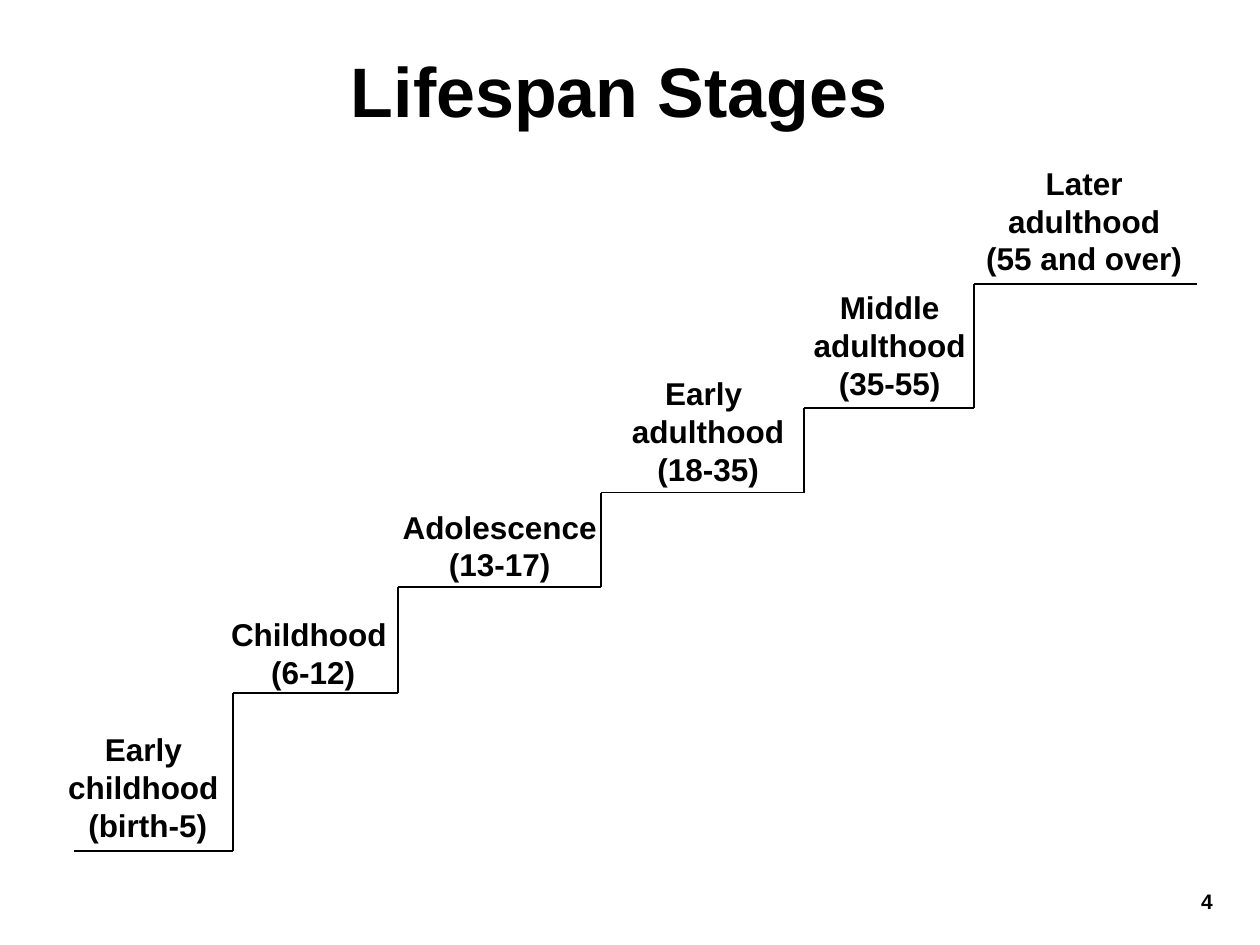
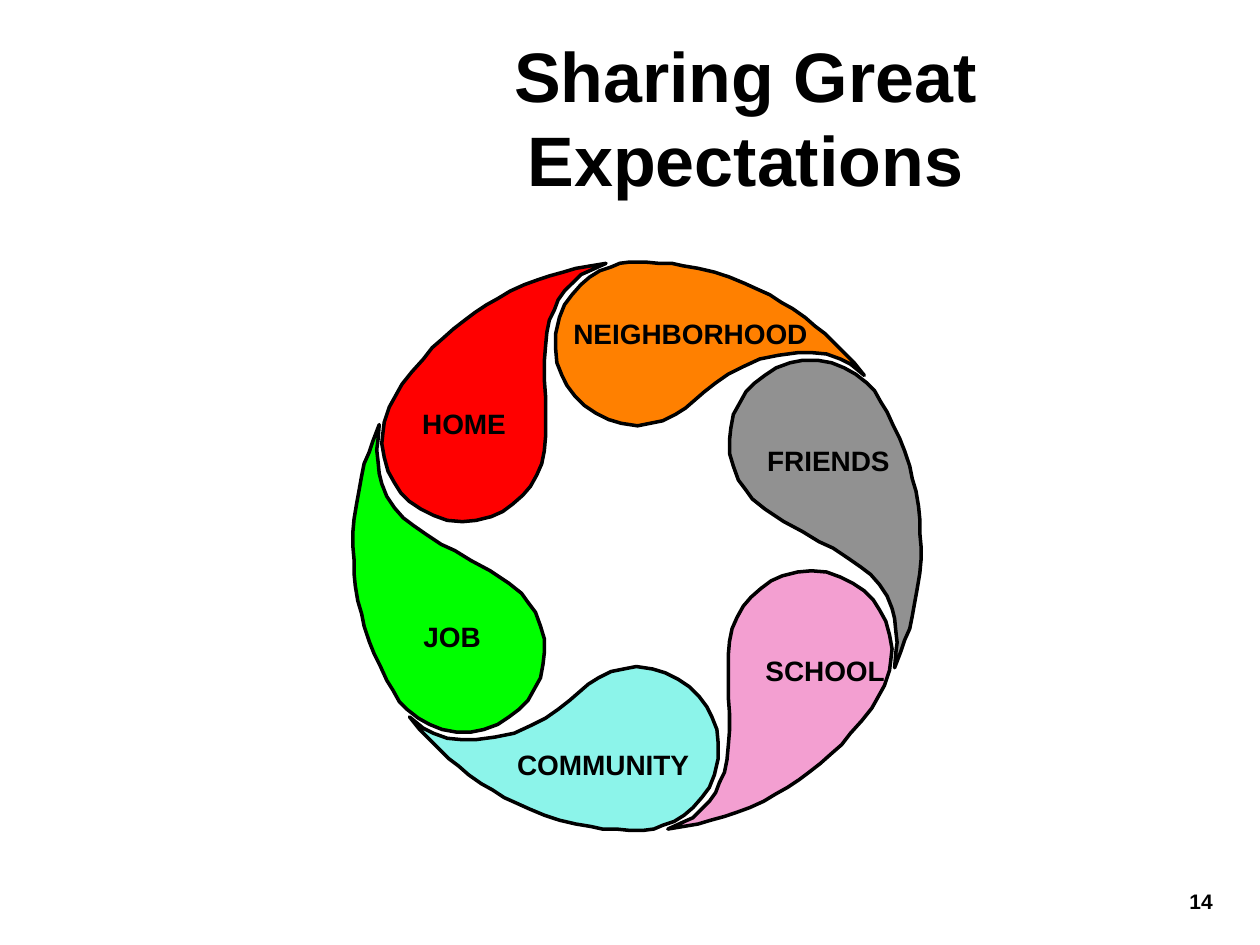
from dataclasses import dataclass

from lxml.etree import SubElement
from pptx import Presentation
from pptx.dml.color import RGBColor
from pptx.enum.text import MSO_ANCHOR, MSO_AUTO_SIZE, PP_ALIGN
from pptx.oxml.ns import qn
from pptx.presentation import Presentation as Deck
from pptx.slide import Slide
from pptx.text.text import TextFrame
from pptx.util import Cm, Pt

FONT = "Arial"
BLACK = "000000"
TITLE_SIZE, STAGE_SIZE, PETAL_SIZE, NUMBER_SIZE = 40, 18, 16, 12
TITLE_ONLY = 5

Points = list[tuple[int, int]]


@dataclass(frozen=True)
class Area:
    """A rectangle in centimetres."""
    left: float
    top: float
    width: float
    height: float

    def lengths(self) -> tuple[Cm, Cm, Cm, Cm]:
        return Cm(self.left), Cm(self.top), Cm(self.width), Cm(self.height)


@dataclass(frozen=True)
class Label:
    text: str
    left: float
    top: float
    width: float


@dataclass(frozen=True)
class Petal:
    label: Label
    fill: str
    outline: Points


# Stairs: each tread runs from one x to the next, at its own height
STEP_X = [1.5, 4.7, 8.03, 12.12, 16.21, 19.63, 24.13]
STEP_Y = [17.15, 13.97, 11.84, 9.93, 8.23, 5.72]
STAGES = [
    Label("Early \vchildhood \v(birth-5)", 0.86, 14.6, 4.24),
    Label("Childhood \v(6-12)", 4.09, 12.27, 4.45),
    Label("Adolescence\v(13-17)", 7.85, 10.11, 4.45),
    Label("Early \vadulthood\v(18-35)", 12.27, 7.42, 4.01),
    Label("Middle\vadulthood\v(35-55)", 15.93, 5.69, 4.01),
    Label("Later\vadulthood\v(55 and over)", 19.58, 3.18, 4.55),
]

# Petal outlines, in grid units
GRID_UNIT = Cm(0.0254)
RING_SPAN = (1011, 867)  # twice the centre of the ring
UPPER_LEFT: Points = [
    (433, 347), (433, 329), (433, 314), (432, 301), (432, 287), (433, 275), (434, 264),
    (436, 254), (440, 246), (443, 238), (448, 231), (454, 225), (461, 218), (470, 214),
    (481, 209), (469, 211), (457, 213), (447, 216), (436, 219), (427, 222), (416, 226),
    (405, 231), (395, 237), (386, 242), (377, 248), (369, 254), (360, 261), (351, 269),
    (343, 276), (336, 285), (327, 295), (319, 305), (314, 314), (309, 323), (305, 335),
    (304, 343), (303, 352), (305, 363), (308, 374), (313, 383), (318, 391), (325, 398),
    (334, 404), (344, 409), (355, 413), (367, 414), (378, 413), (390, 410), (399, 406),
    (407, 400), (415, 393), (421, 386), (426, 377), (430, 368), (432, 358),
]
TOP: Points = [
    (473, 328), (464, 322), (456, 314), (450, 306), (446, 298), (442, 288), (441, 277),
    (441, 265), (444, 252), (448, 242), (454, 234), (461, 226), (468, 220), (476, 215),
    (485, 212), (492, 209), (500, 208), (505, 208), (512, 208), (522, 209), (533, 209),
    (542, 211), (554, 213), (567, 216), (579, 220), (591, 225), (602, 230), (611, 234),
    (620, 240), (629, 245), (639, 252), (647, 259), (655, 265), (663, 273), (671, 281),
    (678, 288), (686, 298), (675, 289), (667, 285), (656, 281), (645, 280), (633, 280),
    (618, 282), (603, 285), (590, 291), (578, 297), (568, 304), (559, 311), (544, 324),
    (536, 329), (526, 334), (516, 336), (506, 338), (493, 336), (483, 333),
]
UPPER_RIGHT: Points = [
    (586, 381), (582, 370), (579, 360), (579, 349), (580, 340), (582, 329), (587, 320),
    (592, 311), (599, 304), (607, 298), (616, 292), (627, 288), (637, 286), (649, 286),
    (660, 288), (670, 292), (679, 297), (688, 304), (694, 310), (699, 319), (704, 327),
    (709, 338), (714, 348), (718, 358), (722, 370), (724, 380), (727, 390), (729, 402),
    (730, 412), (730, 423), (731, 434), (731, 444), (730, 455), (728, 467), (726, 478),
    (724, 489), (722, 499), (718, 508), (715, 517), (710, 530), (711, 518), (712, 510),
    (711, 501), (710, 491), (708, 483), (704, 473), (698, 464), (691, 456), (683, 450),
    (673, 443), (661, 435), (650, 430), (637, 422), (622, 414), (607, 404), (597, 396),
    (592, 389),
]


def half_turn(outline: Points) -> Points:
    """Turn an outline by 180 degrees about the centre of the ring."""
    return [(RING_SPAN[0] - x, RING_SPAN[1] - y) for x, y in outline]


PETALS = [
    Petal(Label("HOME", 8.1, 8.08, 2.51), "FF0000", UPPER_LEFT),
    Petal(Label("NEIGHBORHOOD", 11.05, 6.25, 5.74), "FF8000", TOP),
    Petal(Label("FRIENDS", 15.01, 8.81, 3.38), "919191", UPPER_RIGHT),
    Petal(Label("SCHOOL", 14.83, 13.06, 3.61), "F39FD1", half_turn(UPPER_LEFT)),
    Petal(Label("COMMUNITY", 9.91, 14.94, 4.5), "8CF4EA", half_turn(TOP)),
    Petal(Label("JOB", 8.2, 12.37, 1.83), "00FF00", half_turn(UPPER_RIGHT)),
]


def color(value: str) -> RGBColor:
    return RGBColor.from_string(value)


def write(frame: TextFrame, text: str, size: float,
          align: PP_ALIGN = PP_ALIGN.CENTER) -> None:
    frame.word_wrap = True
    frame.auto_size = MSO_AUTO_SIZE.NONE
    frame.text = text
    for paragraph in frame.paragraphs:
        paragraph.alignment = align
        paragraph.font.name = FONT
        paragraph.font.size = Pt(size)
        paragraph.font.bold = True
        paragraph.font.color.rgb = color(BLACK)


def add_text(page: Slide, area: Area, text: str, size: float,
             align: PP_ALIGN = PP_ALIGN.CENTER) -> None:
    box = page.shapes.add_textbox(*area.lengths())
    write(box.text_frame, text, size, align)


def add_label(page: Slide, label: Label, size: float) -> None:
    height = 0.27 + 0.765 * (label.text.count("\v") + 1) * size / 18
    add_text(page, Area(label.left, label.top, label.width, round(height, 2)),
             label.text, size)


def add_page(deck: Deck, title: str, title_area: Area, number: int) -> Slide:
    page = deck.slides.add_slide(deck.slide_layouts[TITLE_ONLY])
    heading = page.shapes.title
    heading.left, heading.top, heading.width, heading.height = title_area.lengths()
    heading.text_frame.vertical_anchor = MSO_ANCHOR.MIDDLE
    write(heading.text_frame, title, TITLE_SIZE)
    add_text(page, Area(23.2, 17.78, 1.5, 1.02), str(number), NUMBER_SIZE, PP_ALIGN.RIGHT)
    return page


def add_line(page: Slide, x1: float, y1: float, x2: float, y2: float) -> None:
    line = page.shapes.add_connector(1, Cm(x1), Cm(y1), Cm(x2), Cm(y2))
    line.line.color.rgb = color(BLACK)
    line.line.width = Pt(1)
    SubElement(line._element.spPr, qn("a:effectLst"))


def add_petal(page: Slide, petal: Petal) -> None:
    start, *rest = petal.outline
    builder = page.shapes.build_freeform(*start, scale=GRID_UNIT)
    builder.add_line_segments(rest, close=True)
    shape = builder.convert_to_shape()
    shape.shadow.inherit = False
    shape.fill.solid()
    shape.fill.fore_color.rgb = color(petal.fill)
    shape.line.color.rgb = color(BLACK)
    shape.line.width = Pt(2)
    SubElement(shape.line._get_or_add_ln(), qn("a:round"))


def build_stages(deck: Deck) -> None:
    page = add_page(deck, "Lifespan Stages", Area(4.01, 0.64, 16.94, 2.34), 4)
    for stage in STAGES:
        add_label(page, stage, STAGE_SIZE)
    # Treads
    for left, right, y in zip(STEP_X, STEP_X[1:], STEP_Y):
        add_line(page, left, y, right, y)
    # Risers
    for x, low, high in zip(STEP_X[1:], STEP_Y, STEP_Y[1:]):
        add_line(page, x, low, x, high)


def build_expectations(deck: Deck) -> None:
    page = add_page(deck, "Sharing Great Expectations", Area(5.92, 0.76, 18.21, 3.18), 14)
    for petal in PETALS:
        add_petal(page, petal)
    for petal in PETALS:
        add_label(page, petal.label, PETAL_SIZE)


def main() -> None:
    deck = Presentation()
    deck.slide_width, deck.slide_height = Cm(25.4), Cm(19.05)
    build_stages(deck)
    build_expectations(deck)
    deck.save("out.pptx")


if __name__ == "__main__":
    main()
